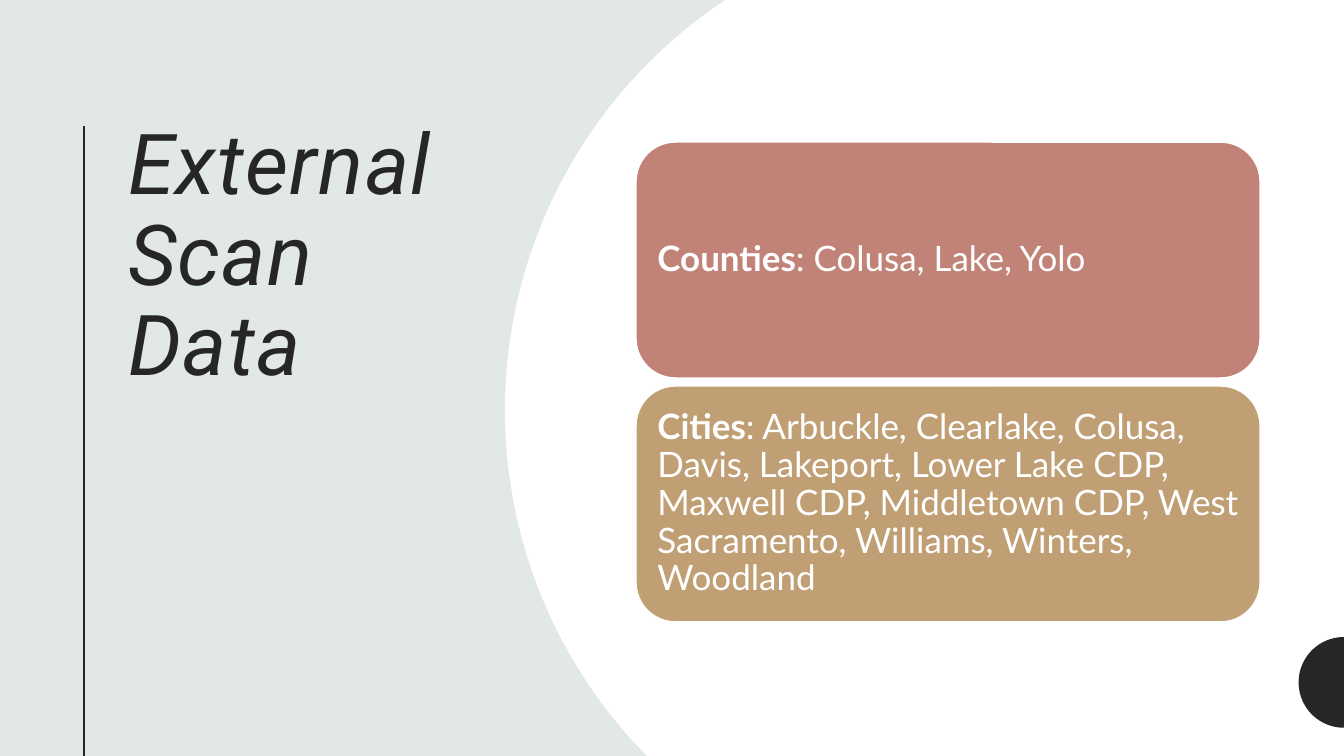
"""Build the External Scan Data slide."""
from dataclasses import dataclass
from math import asin, cos, sin

from lxml import etree
from pptx import Presentation
from pptx import util as u
from pptx.dml.color import RGBColor
from pptx.enum import shapes, text
from pptx.oxml.ns import qn
from pptx.slide import Slide

WIDTH, HEIGHT = 13.333, 7.5
MIST = RGBColor(0xE2, 0xE8, 0xE6)
INK = RGBColor(0x26, 0x26, 0x26)
WHITE = RGBColor(0xFF, 0xFF, 0xFF)
ROSE = RGBColor(0xC1, 0x83, 0x77)
SAND = RGBColor(0xC0, 0x9F, 0x74)

CARD_LEFT, CARD_TOP = 6.31, 1.41
CARD_WIDTH, CARD_HEIGHT, CARD_STEP = 6.19, 2.34, 2.42
ARC_STEPS = 96


@dataclass(frozen=True)
class Disc:
    """A disc that bulges left and fills the slide to its right edge."""

    center_x: float
    center_y: float
    radius: float
    color: RGBColor


@dataclass(frozen=True)
class Card:
    """A rounded card with a bold label and a list of places."""

    label: str
    places: str
    color: RGBColor


DISCS = (
    Disc(9.89, 4.07, 4.88, WHITE),
    Disc(WIDTH, 6.77, 0.45, INK),
)
CARDS = (
    Card("Counties", "Colusa, Lake, Yolo", ROSE),
    Card(
        "Cities",
        "Arbuckle, Clearlake, Colusa, Davis, Lakeport, Lower Lake CDP, "
        "Maxwell CDP, Middletown CDP, West Sacramento, Williams, Winters, Woodland",
        SAND,
    ),
)


def set_title(slide: Slide, title: str) -> None:
    """Place and format the title placeholder."""
    shape = slide.shapes.title
    shape.left, shape.top = u.Inches(1.17), u.Inches(1.16)
    shape.width, shape.height = u.Inches(3.41), u.Inches(5.26)
    frame = shape.text_frame
    frame.text = title
    frame.word_wrap = True
    frame.auto_size = text.MSO_AUTO_SIZE.NONE
    frame.vertical_anchor = text.MSO_ANCHOR.TOP
    paragraph = frame.paragraphs[0]
    paragraph.alignment = text.PP_ALIGN.LEFT
    paragraph.line_spacing = 0.9
    run = paragraph.runs[0]
    run.font.name, run.font.size = "Roboto", u.Pt(60)
    run.font.italic = True
    run.font.color.rgb = INK
    run.font._element.set("spc", "100")


def add_rule(slide: Slide) -> None:
    """Draw the vertical rule beside the title."""
    x = u.Inches(WIDTH / 16)
    rule = slide.shapes.add_connector(
        shapes.MSO_CONNECTOR.STRAIGHT, x, u.Inches(HEIGHT / 6), x, u.Inches(HEIGHT)
    )
    rule.line.color.rgb = INK
    rule.line.width = u.Pt(1.5)
    etree.SubElement(rule._element.spPr, qn("a:effectLst"))


def add_disc(slide: Slide, disc: Disc) -> None:
    """Draw the visible part of a disc, cut off by the slide's edges."""
    top = max(0, disc.center_y - disc.radius)
    bottom = min(HEIGHT, disc.center_y + disc.radius)
    start = asin(min(1, (bottom - disc.center_y) / disc.radius))
    end = asin(max(-1, (top - disc.center_y) / disc.radius))
    angles = [start + (end - start) * step / ARC_STEPS for step in range(ARC_STEPS + 1)]
    arc = [
        (disc.center_x - disc.radius * cos(angle), disc.center_y + disc.radius * sin(angle))
        for angle in angles
    ]
    outline = [(u.Inches(x), u.Inches(y)) for x, y in [(WIDTH, bottom), *arc, (WIDTH, top)]]
    builder = slide.shapes.build_freeform(*outline[0])
    builder.add_line_segments(outline[1:], close=True)
    shape = builder.convert_to_shape()
    shape.shadow.inherit = False
    shape.fill.solid()
    shape.fill.fore_color.rgb = disc.color
    shape.line.fill.background()


def add_card(slide: Slide, card: Card, row: int) -> None:
    """Draw one card in its row."""
    shape = slide.shapes.add_shape(
        shapes.MSO_SHAPE.ROUNDED_RECTANGLE,
        u.Inches(CARD_LEFT),
        u.Inches(CARD_TOP + row * CARD_STEP),
        u.Inches(CARD_WIDTH),
        u.Inches(CARD_HEIGHT),
    )
    shape.shadow.inherit = False
    shape.fill.solid()
    shape.fill.fore_color.rgb = card.color
    shape.line.color.rgb = WHITE
    shape.line.width = u.Pt(1)
    frame = shape.text_frame
    frame.word_wrap = True
    frame.vertical_anchor = text.MSO_ANCHOR.MIDDLE
    frame.margin_left = frame.margin_right = u.Inches(0.1)
    frame.margin_top = frame.margin_bottom = u.Inches(0.1)
    paragraph = frame.paragraphs[0]
    paragraph.alignment = text.PP_ALIGN.LEFT
    paragraph.line_spacing = 0.9
    for content, bold in ((card.label, True), (f": {card.places}", False)):
        run = paragraph.add_run()
        run.text = content
        run.font.name, run.font.size = "Lato", u.Pt(25)
        run.font.bold = bold
        run.font.color.rgb = WHITE


def main() -> None:
    """Build and save the presentation."""
    presentation = Presentation()
    presentation.slide_width = u.Inches(WIDTH)
    presentation.slide_height = u.Inches(HEIGHT)
    title_only = presentation.slide_layouts.get_by_name("Title Only")
    slide = presentation.slides.add_slide(title_only)
    slide.background.fill.solid()
    slide.background.fill.fore_color.rgb = MIST
    set_title(slide, "External Scan Data")
    add_rule(slide)
    for disc in DISCS:
        add_disc(slide, disc)
    for row, card in enumerate(CARDS):
        add_card(slide, card, row)
    presentation.save("out.pptx")


if __name__ == "__main__":
    main()
